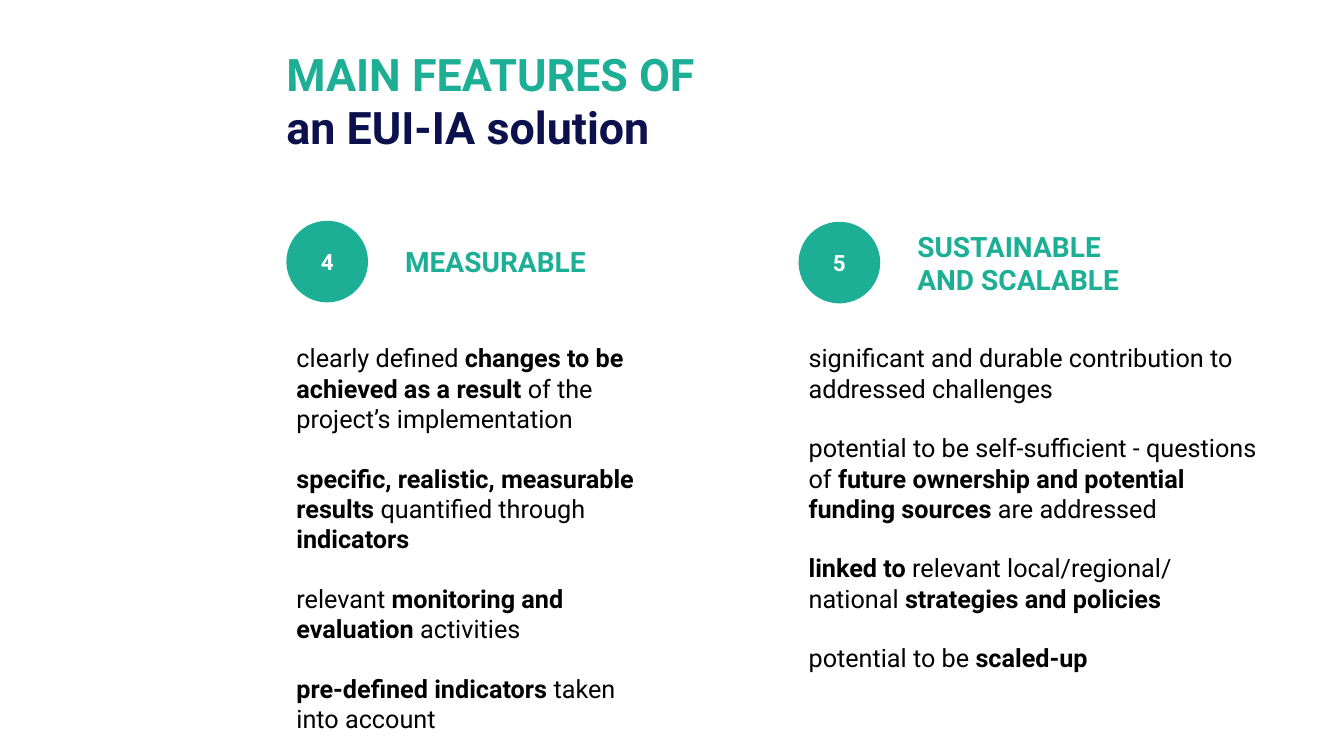
from pptx import Presentation
from pptx.dml.color import RGBColor
from pptx.enum.shapes import MSO_SHAPE
from pptx.enum.text import MSO_ANCHOR as Anchor, MSO_AUTO_SIZE as AutoSize, PP_ALIGN as Align
from pptx.oxml.ns import qn
from pptx.util import Emu, Pt
from lxml.etree import SubElement

PX = 9144
FONT = "Roboto"
GREEN, NAVY, BLACK, WHITE = "1CAF96", "0C114D", "000000", "FFFFFF"
CIRCLE = 81
HEADING_OFFSET = 108
LIST_TOP = 335

MEASURABLE = [
    [("clearly defined ", False), ("changes to be achieved as a result ", True),
     ("of the project’s implementation", False)],
    [("specific, realistic, measurable results ", True), ("quantified through ", False),
     ("indicators", True)],
    [("relevant ", False), ("monitoring and evaluation ", True), ("activities", False)],
    [("pre-defined indicators ", True), ("taken into account", False)],
]
SUSTAINABLE = [
    [("significant and durable contribution to addressed challenges", False)],
    [("potential to be self-sufficient - questions of ", False),
     ("future ownership and potential funding sources", True), (" are addressed", False)],
    [("linked to ", True), ("relevant local/regional/ national ", False),
     ("strategies and policies", True)],
    [("potential to be ", False), ("scaled-up", True)],
]


def px(*lengths):
    """Turn pixel lengths into EMU."""
    return [Emu(length * PX) for length in lengths]


def color(hex_code):
    """Turn a hex string into a colour."""
    return RGBColor.from_string(hex_code)


def place(shape, left, top, width, height):
    """Move and size a shape in pixels."""
    shape.left, shape.top, shape.width, shape.height = px(left, top, width, height)


def prepare(shape, anchor=Anchor.TOP):
    """Return the wrapping, fixed-size text frame of a shape."""
    frame = shape.text_frame
    frame.word_wrap = True
    frame.auto_size = AutoSize.NONE
    frame.vertical_anchor = anchor
    return frame


def write(paragraph, text, size=18, fill=BLACK, bold=True, align=Align.LEFT):
    """Append formatted text to a paragraph, breaking at newlines."""
    paragraph.alignment = align
    for number, line in enumerate(text.split("\n")):
        if number:
            paragraph.add_line_break()
        run = paragraph.add_run()
        run.text = line
        font = run.font
        font.name, font.size, font.bold = FONT, Pt(size), bold
        font.color.rgb = color(fill)


def add_title(title, left, top, width, height):
    """Fill the title placeholder with its two coloured lines."""
    place(title, left, top, width, height)
    paragraph = prepare(title).paragraphs[0]
    write(paragraph, "MAIN FEATURES OF", size=32, fill=GREEN)
    paragraph.add_line_break()
    write(paragraph, "an EUI-IA solution", size=32, fill=NAVY)


def add_heading(slide, number, text, left, top, width):
    """Group a numbered circle with the heading beside it."""
    group = slide.shapes.add_group_shape()
    circle = group.shapes.add_shape(MSO_SHAPE.OVAL, *px(left, top, CIRCLE, CIRCLE))
    circle.shadow.inherit = False
    circle.fill.solid()
    circle.fill.fore_color.rgb = color(GREEN)
    circle.line.fill.background()
    write(prepare(circle, Anchor.MIDDLE).paragraphs[0], number,
          size=16, fill=WHITE, align=Align.CENTER)
    label = group.shapes.add_textbox(*px(left + HEADING_OFFSET, top, width, CIRCLE))
    write(prepare(label, Anchor.MIDDLE).paragraphs[0], text, size=20, fill=GREEN)


def add_list(body, items, left, top, width, height):
    """Fill a body placeholder with unbulleted, spaced paragraphs."""
    place(body, left, top, width, height)
    frame = prepare(body)
    for index, item in enumerate(items):
        paragraph = frame.add_paragraph() if index else frame.paragraphs[0]
        for text, bold in item:
            write(paragraph, text, bold=bold)
        paragraph.space_before = Pt(21 if index else 0)
        properties = paragraph._p.get_or_add_pPr()
        properties.set("marL", "0")
        properties.set("indent", "0")
        SubElement(properties, qn("a:buNone"))


def add_feature(slide, body, number, heading, items, left, top, heading_width, width, height):
    """Build one feature column: circle, heading and list."""
    add_heading(slide, number, heading, left, top, heading_width)
    add_list(body, items, left, LIST_TOP, width, height)


def main():
    """Build and save the slide."""
    presentation = Presentation()
    presentation.slide_width, presentation.slide_height = px(1333, 750)
    slide = presentation.slides.add_slide(presentation.slide_layouts[3])
    title, first_body, second_body = slide.placeholders
    add_title(title, 274, 41, 551, 118)
    add_feature(slide, first_body, "4", "MEASURABLE", MEASURABLE, 284, 219, 380, 383, 404)
    add_feature(slide, second_body, "5", "SUSTAINABLE\nAND SCALABLE", SUSTAINABLE,
                792, 220, 334, 471, 343)
    presentation.save("out.pptx")


if __name__ == "__main__":
    main()
